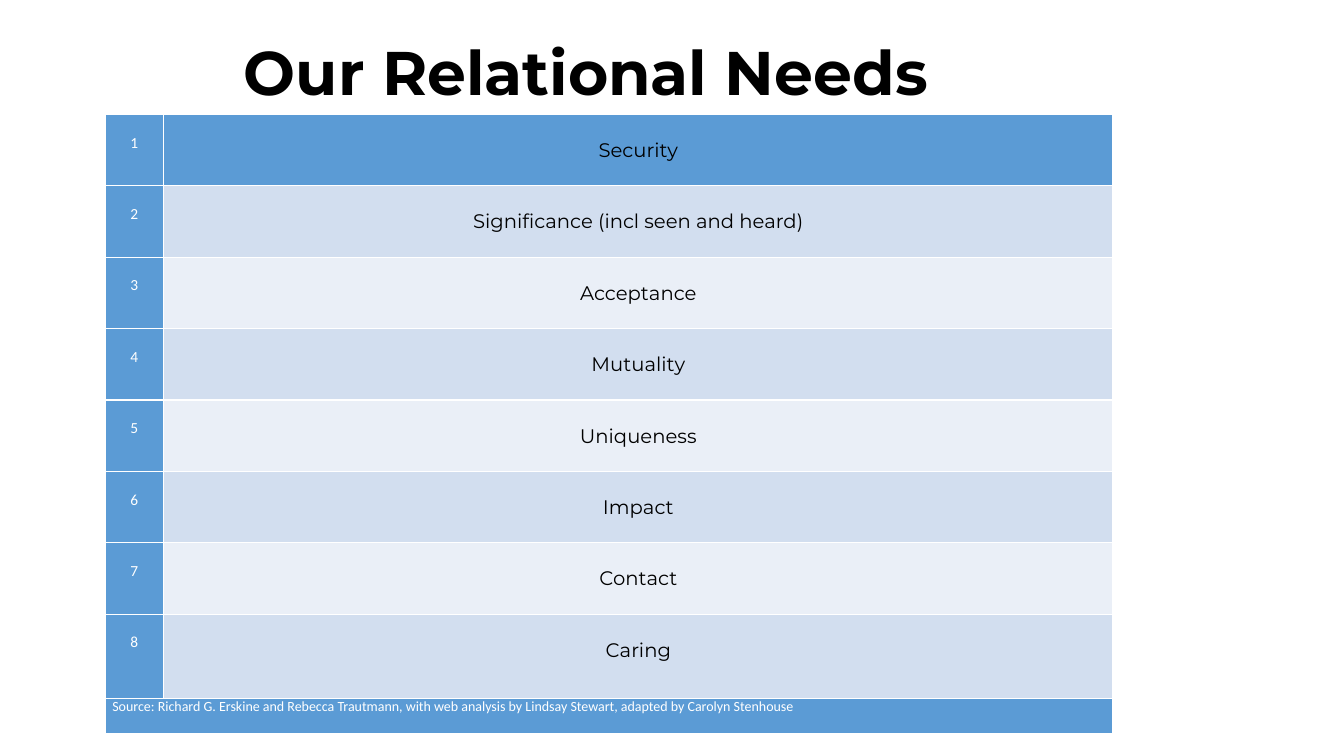
"""Build the slide of eight relational needs as a numbered table."""
import pptx
import pptx.dml.color
import pptx.enum.text
import pptx.oxml
import pptx.oxml.ns
import pptx.util

PX = 9525
BLUE, WHITE, BLACK = "5B9BD5", "FFFFFF", "000000"
BANDS = ["EAEFF7", "D2DEEF"]
ALIGN = pptx.enum.text.PP_ALIGN
NEEDS = ["Security", "Significance (incl seen and heard)", "Acceptance",
         "Mutuality", "Uniqueness", "Impact", "Contact", "Caring"]
SOURCE = ("Source: Richard G. Erskine and Rebecca Trautmann, with web analysis "
          "by Lindsay Stewart, adapted by Carolyn Stenhouse")


def color(code):
    return pptx.dml.color.RGBColor.from_string(code)


def write(frame, text, size=11, face="Calibri", ink=WHITE, bold=False,
          align=ALIGN.CENTER):
    line = frame.paragraphs[0]
    line.alignment = align
    run = line.add_run()
    run.text = text
    run.font.size = pptx.util.Pt(size)
    run.font.name = face
    run.font.bold = bold
    run.font.color.rgb = color(ink)


deck = pptx.Presentation()
deck.slide_width, deck.slide_height = 1280 * PX, 720 * PX
slide = deck.slides.add_slide(deck.slide_layouts[6])

title = slide.shapes.add_textbox(204 * PX, 28 * PX, 725 * PX, 81 * PX).text_frame
title.word_wrap = False
title.auto_size = pptx.enum.text.MSO_AUTO_SIZE.SHAPE_TO_FIT_TEXT
write(title, "Our Relational Needs ", size=44, face="Montserrat", ink=BLACK, bold=True)

wide = [56, 904]
high = [68] * 7 + [80, 34]
table = slide.shapes.add_table(len(high), len(wide), 100 * PX, 109 * PX,
                               sum(wide) * PX, sum(high) * PX).table
for col, size in zip(table.columns, wide):
    col.width = size * PX
for row, size in zip(table.rows, high):
    row.height = size * PX

for cell in table.iter_cells():
    cell.margin_left = cell.margin_right = 7 * PX
    cell.margin_top = cell.margin_bottom = 0
    props = cell._tc.get_or_add_tcPr()
    for side in ("lnL", "lnR", "lnT", "lnB"):
        props.append(pptx.oxml.parse_xml(
            f'<a:{side} {pptx.oxml.ns.nsdecls("a")} w="12700"><a:solidFill>'
            f'<a:srgbClr val="{WHITE}"/></a:solidFill></a:{side}>'))
    cell.fill.solid()
    cell.fill.fore_color.rgb = color(BLUE)

for i, need in enumerate(NEEDS):
    mark, name = table.cell(i, 0), table.cell(i, 1)
    mark.margin_top = 18 * PX
    name.margin_top = 23 * PX
    write(mark.text_frame, str(i + 1))
    write(name.text_frame, need, size=14, face="Montserrat", ink=BLACK)
    if i:
        name.fill.fore_color.rgb = color(BANDS[i % 2])

foot = table.cell(len(NEEDS), 0)
foot.merge(table.cell(len(NEEDS), 1))
write(foot.text_frame, SOURCE, size=10, align=ALIGN.LEFT)

deck.save("out.pptx")
